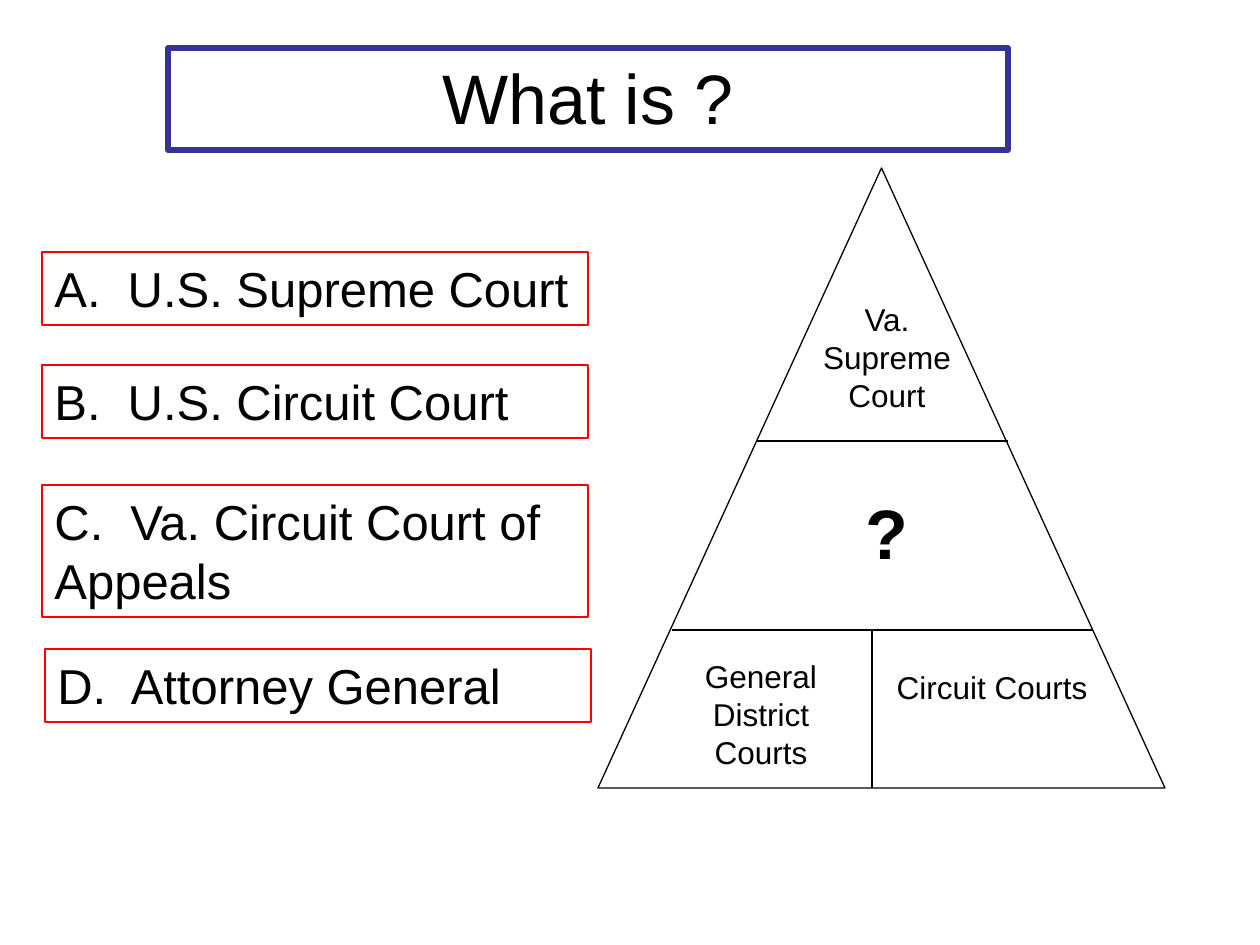
from lxml import etree
from pptx import Presentation
from pptx import util as u
from pptx.dml.color import RGBColor
from pptx.enum import shapes, text
from pptx.oxml.ns import qn

SCALE = 914400 / 126
COLORS = {"black": "000000", "white": "FFFFFF", "red": "FF0000", "indigo": "333399"}


def px(*lengths):
    return [u.Emu(round(n * SCALE)) for n in lengths]


def write(sp, words, size, align, bold=False):
    tf = sp.text_frame
    tf.word_wrap = True
    tf.auto_size = text.MSO_AUTO_SIZE.NONE
    tf.vertical_anchor = text.MSO_ANCHOR.TOP
    p = tf.paragraphs[0]
    p.alignment = align
    for i, line in enumerate(words.split("\n")):
        if i:
            p.add_line_break()
        r = p.add_run()
        r.text = line
        r.font.name = "Arial"
        r.font.size = u.Pt(size)
        r.font.bold = bold
        r.font.color.rgb = RGBColor.from_string(COLORS["black"])


prs = Presentation()
prs.slide_width, prs.slide_height = px(1260, 945)
s = prs.slides.add_slide(prs.slide_layouts[5])
LEFT, CENTER = text.PP_ALIGN.LEFT, text.PP_ALIGN.CENTER

# Question
title = s.shapes.title
title.left, title.top, title.width, title.height = px(168, 48, 840, 102)
title.line.color.rgb = RGBColor.from_string(COLORS["indigo"])
title.line.width = u.Pt(3)
write(title, "What is ?", 40, CENTER)

# Answer options
options = [
    ("A.  U.S. Supreme Court", 42, 252, 73),
    ("B.  U.S. Circuit Court", 42, 365, 73),
    ("C.  Va. Circuit Court of Appeals", 42, 485, 132),
    ("D.  Attorney General", 45, 649, 73),
]
for words, x, y, h in options:
    sp = s.shapes.add_shape(shapes.MSO_SHAPE.RECTANGLE, *px(x, y, 546, h))
    sp.shadow.inherit = False
    sp.fill.background()
    sp.line.color.rgb = RGBColor.from_string(COLORS["red"])
    sp.line.width = u.Pt(0.75)
    write(sp, words, 28, LEFT)

# Court pyramid
pyramid = s.shapes.add_shape(shapes.MSO_SHAPE.ISOSCELES_TRIANGLE, *px(598, 168, 567, 620))
pyramid.shadow.inherit = False
pyramid.fill.solid()
pyramid.fill.fore_color.rgb = RGBColor.from_string(COLORS["white"])
pyramid.line.color.rgb = RGBColor.from_string(COLORS["black"])
pyramid.line.width = u.Pt(0.75)

dividers = [(756, 441, 1008, 441), (672, 630, 1092, 630), (872, 630, 872, 788)]
for ends in dividers:
    line = s.shapes.add_connector(shapes.MSO_CONNECTOR.STRAIGHT, *px(*ends))
    line.line.color.rgb = RGBColor.from_string(COLORS["black"])
    line.line.width = u.Pt(0.75)
    etree.SubElement(line._element.spPr, qn("a:effectLst"))

courts = [
    ("Va.\nSupreme Court", 777, 294, 126, 18, False),
    ("?", 777, 483, 97, 40, True),
    ("General District Courts", 651, 651, 126, 18, False),
    ("Circuit Courts", 882, 662, 50, 18, False),
]
for words, x, y, h, size, bold in courts:
    label = s.shapes.add_textbox(*px(x, y, 220, h))
    write(label, words, size, CENTER, bold)

prs.save("out.pptx")
